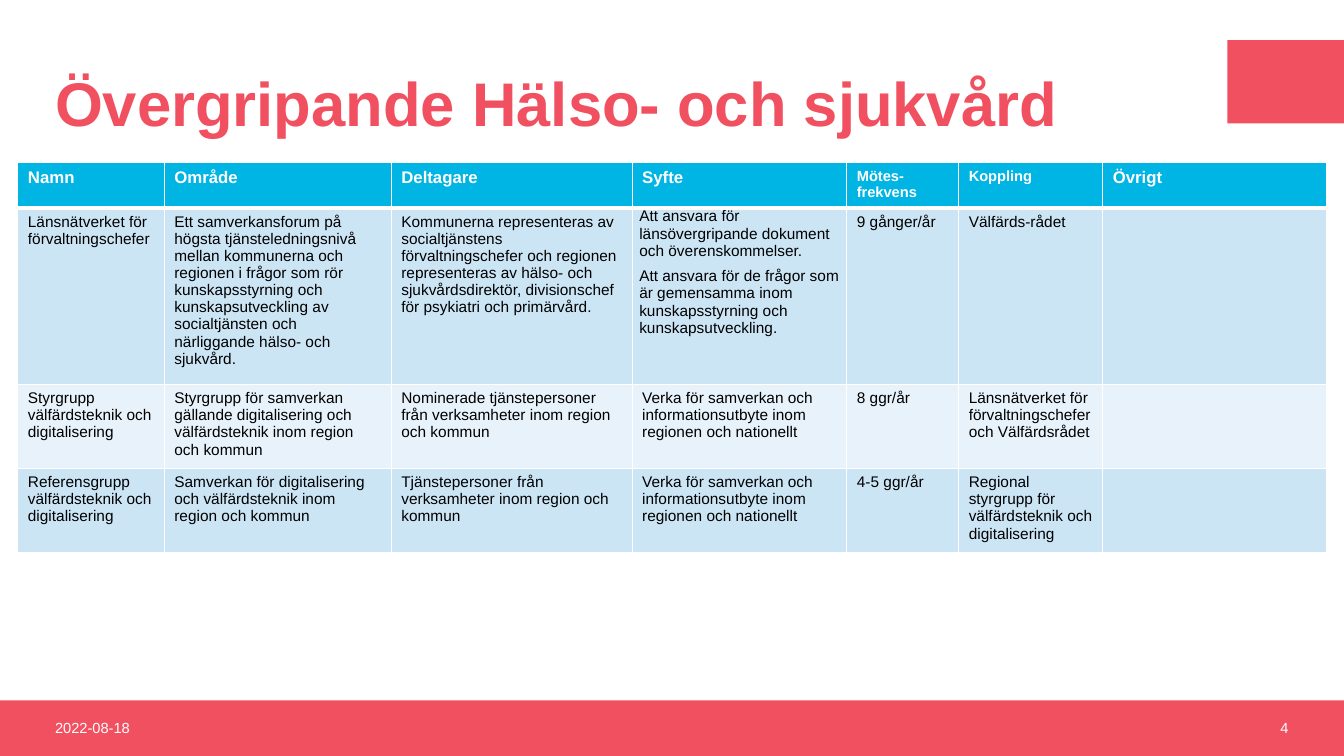
from dataclasses import dataclass

from lxml.etree import SubElement
from pptx import Presentation
from pptx.dml.color import RGBColor
from pptx.enum.shapes import MSO_SHAPE
from pptx.enum.text import MSO_ANCHOR, PP_ALIGN
from pptx.oxml.ns import qn
from pptx.slide import Slide
from pptx.table import _Cell
from pptx.util import Cm, Pt


@dataclass(frozen=True)
class Theme:
    font: str = "Arial"
    accent: str = "F15060"
    header: str = "00B4E4"
    bands: tuple[str, str] = ("CCE5F5", "E7F2FA")
    white: str = "FFFFFF"
    black: str = "000000"
    title_size: float = 44
    header_size: float = 12
    small_size: float = 10.5
    body_size: float = 11


@dataclass(frozen=True)
class Box:
    left: float
    top: float
    width: float
    height: float

    def lengths(self) -> tuple[Cm, Cm, Cm, Cm]:
        return Cm(self.left), Cm(self.top), Cm(self.width), Cm(self.height)


@dataclass(frozen=True)
class Label:
    text: str
    box: Box
    size: float
    color: str
    bold: bool = False
    align: PP_ALIGN = PP_ALIGN.LEFT
    line_spacing: float = 1.0


@dataclass(frozen=True)
class Column:
    heading: str
    width: float
    heading_size: float


@dataclass(frozen=True)
class Network:
    height: float
    texts: tuple[str, ...]


THEME = Theme()

BLOCKS = (
    Box(0, 17.65, 33.87, 1.4),  # footer band
    Box(30.93, 1.01, 2.94, 2.1),  # corner block
)

LABELS = (
    Label("Övergripande Hälso- och sjukvård", Box(1.14, 1.01, 29.49, 3.35),
          THEME.title_size, THEME.accent, bold=True, line_spacing=0.9),
    Label("2022-08-18", Box(1.14, 17.65, 7.62, 1.38), THEME.small_size, THEME.white),
    Label("4", Box(25.1, 17.65, 7.62, 1.38), THEME.small_size, THEME.white,
          align=PP_ALIGN.RIGHT),
)

COLUMNS = (
    Column("Namn", 3.69, THEME.header_size),
    Column("Område", 5.72, THEME.header_size),
    Column("Deltagare", 6.07, THEME.header_size),
    Column("Syfte", 5.41, THEME.header_size),
    Column("Mötes-frekvens", 2.82, THEME.small_size),
    Column("Koppling", 3.63, THEME.small_size),
    Column("Övrigt", 5.64, THEME.header_size),
)
HEADER_HEIGHT = 1.05

NETWORKS = (
    Network(4.15, (
        "Länsnätverket för förvaltningschefer",
        "Ett samverkansforum på högsta tjänsteledningsnivå mellan kommunerna och "
        "regionen i frågor som rör kunskapsstyrning och kunskapsutveckling av "
        "socialtjänsten och närliggande hälso- och sjukvård.",
        "Kommunerna representeras av socialtjänstens förvaltningschefer och regionen "
        "representeras av hälso- och sjukvårdsdirektör, divisionschef för psykiatri "
        "och primärvård.",
        "Att ansvara för länsövergripande dokument och överenskommelser.\n"
        "Att ansvara för de frågor som är gemensamma inom kunskapsstyrning och "
        "kunskapsutveckling.",
        "9 gånger/år",
        "Välfärds-rådet",
        "",
    )),
    Network(1.98, (
        "Styrgrupp välfärdsteknik och digitalisering",
        "Styrgrupp för samverkan gällande digitalisering och välfärdsteknik inom "
        "region och kommun",
        "Nominerade tjänstepersoner från verksamheter inom region och kommun",
        "Verka för samverkan och informationsutbyte inom regionen och nationellt",
        "8 ggr/år",
        "Länsnätverket för förvaltningschefer och Välfärdsrådet",
        "",
    )),
    Network(1.98, (
        "Referensgrupp välfärdsteknik och digitalisering",
        "Samverkan för digitalisering och välfärdsteknik inom region och kommun",
        "Tjänstepersoner från verksamheter inom region och kommun",
        "Verka för samverkan och informationsutbyte inom regionen och nationellt",
        "4-5 ggr/år",
        "Regional styrgrupp för välfärdsteknik och digitalisering",
        "",
    )),
)


def style_text(text_frame, size: float, color: str, bold: bool = False) -> None:
    for paragraph in text_frame.paragraphs:
        paragraph.font.size = Pt(size)
        for run in paragraph.runs:
            run.font.name = THEME.font
            run.font.size = Pt(size)
            run.font.bold = bold
            run.font.color.rgb = RGBColor.from_string(color)


def add_block(slide: Slide, box: Box) -> None:
    shape = slide.shapes.add_shape(MSO_SHAPE.RECTANGLE, *box.lengths())
    shape.shadow.inherit = False
    shape.fill.solid()
    shape.fill.fore_color.rgb = RGBColor.from_string(THEME.accent)
    shape.line.fill.background()


def add_label(slide: Slide, label: Label) -> None:
    text_frame = slide.shapes.add_textbox(*label.box.lengths()).text_frame
    text_frame.word_wrap = True
    text_frame.vertical_anchor = MSO_ANCHOR.MIDDLE
    text_frame.text = label.text
    paragraph = text_frame.paragraphs[0]
    paragraph.alignment = label.align
    paragraph.line_spacing = label.line_spacing
    style_text(text_frame, label.size, label.color, label.bold)


def set_borders(cell: _Cell, top: float, bottom: float) -> None:
    properties = cell._tc.get_or_add_tcPr()
    for side, width in (("L", 1), ("R", 1), ("T", top), ("B", bottom)):
        line = SubElement(properties, qn(f"a:ln{side}"), w=str(Pt(width)))
        fill = SubElement(line, qn("a:solidFill"))
        SubElement(fill, qn("a:srgbClr"), val=THEME.white)


def fill_cell(cell: _Cell, text: str, fill: str, size: float, color: str,
              bold: bool = False, top: float = 1, bottom: float = 1) -> None:
    set_borders(cell, top, bottom)
    cell.fill.solid()
    cell.fill.fore_color.rgb = RGBColor.from_string(fill)
    cell.text_frame.text = text
    style_text(cell.text_frame, size, color, bold)
    # Cells with several paragraphs have tight margins and spaced paragraphs
    if len(cell.text_frame.paragraphs) > 1:
        cell.margin_left = cell.margin_right = Cm(0.18)
        cell.margin_top = cell.margin_bottom = Cm(0)
        for paragraph in cell.text_frame.paragraphs:
            paragraph.space_after = Pt(6)


def add_network_table(slide: Slide) -> None:
    heights = [HEADER_HEIGHT, *(network.height for network in NETWORKS)]
    box = Box(0.45, 4.1, sum(column.width for column in COLUMNS), sum(heights))
    table = slide.shapes.add_table(len(heights), len(COLUMNS), *box.lengths()).table
    for row, height in zip(table.rows, heights):
        row.height = Cm(height)
    for index, column in enumerate(COLUMNS):
        table.columns[index].width = Cm(column.width)
        fill_cell(table.cell(0, index), column.heading, THEME.header,
                  column.heading_size, THEME.white, bold=True, bottom=3)
        for number, network in enumerate(NETWORKS):
            fill_cell(table.cell(number + 1, index), network.texts[index],
                      THEME.bands[number % 2], THEME.body_size, THEME.black,
                      top=3 if number == 0 else 1)


def main() -> None:
    presentation = Presentation()
    presentation.slide_width, presentation.slide_height = Cm(33.87), Cm(19.05)
    slide = presentation.slides.add_slide(presentation.slide_layouts[6])
    # Coloured blocks
    for box in BLOCKS:
        add_block(slide, box)
    # Title, date and page number
    for label in LABELS:
        add_label(slide, label)
    # Table of networks
    add_network_table(slide)
    presentation.save("out.pptx")


if __name__ == "__main__":
    main()
